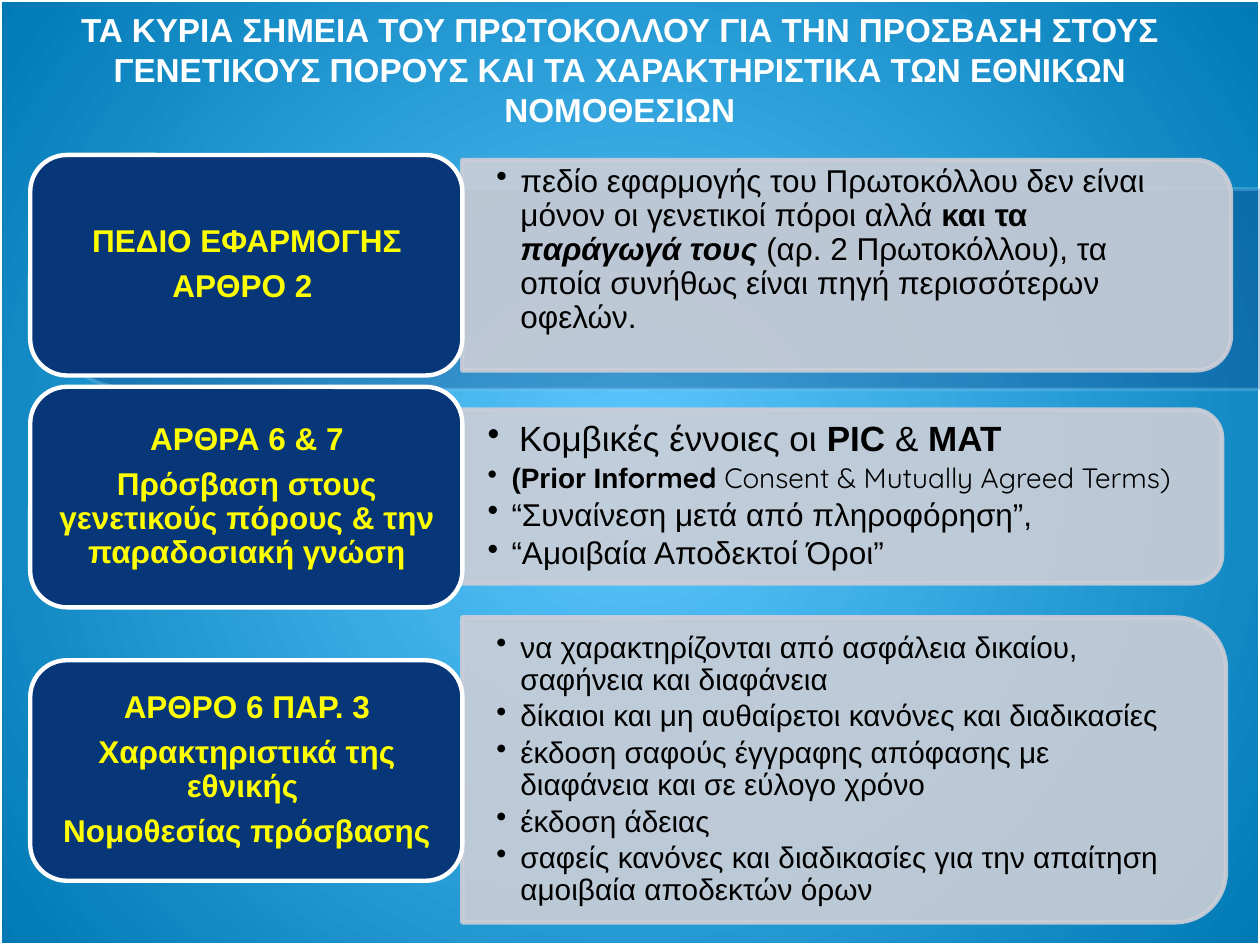
"""Build a slide of three labelled cards, each with a panel of bullet points."""
from lxml.etree import SubElement
from pptx import Presentation
from pptx.dml.color import RGBColor
from pptx.enum.shapes import MSO_SHAPE
from pptx.enum.text import MSO_ANCHOR, PP_ALIGN
from pptx.oxml.ns import qn
from pptx.util import Inches, Pt

WIDE, HIGH = 10, 7.5
NAVY, GREY, WHITE, YELLOW = "073779", "CCCED7", "FFFFFF", "FFFF00"
BOLD = {"bold": True}
QUICK = {"face": "Quicksand"}

TITLE = ("ΤΑ ΚΥΡΙΑ ΣΗΜΕΙΑ ΤΟΥ ΠΡΩΤΟΚΟΛΛΟΥ ΓΙΑ ΤΗΝ ΠΡΟΣΒΑΣΗ ΣΤΟΥΣ ΓΕΝΕΤΙΚΟΥΣ "
         "ΠΟΡΟΥΣ ΚΑΙ ΤΑ ΧΑΡΑΚΤΗΡΙΣΤΙΚΑ ΤΩΝ ΕΘΝΙΚΩΝ ΝΟΜΟΘΕΣΙΩΝ")

ROWS = [
    {"top": 1.23, "panel": (3.67, 1.27, 6.1, 1.67), "text": (3.67, 1.35, 6.02, 1.27),
     "size": 18,
     "label": ["ΠΕΔΙΟ ΕΦΑΡΜΟΓΗΣ", "ΑΡΘΡΟ 2 "],
     "points": [
         [("πεδίο εφαρμογής του Πρωτοκόλλου δεν είναι μόνον οι γενετικοί πόροι αλλά ", {}),
          ("και τα ", BOLD),
          ("παράγωγά τους ", {"bold": True, "italic": True}),
          ("(αρ. 2 Πρωτοκόλλου), τα οποία συνήθως είναι πηγή περισσότερων οφελών.", {})]]},
    {"top": 3.07, "panel": (3.6, 3.25, 6.1, 1.38), "text": (3.6, 3.32, 6.03, 1.24),
     "size": 18,
     "label": ["ΑΡΘΡΑ 6 & 7",
               "Πρόσβαση στους γενετικούς πόρους & την παραδοσιακή γνώση"],
     "points": [
         [("Κομβικές έννοιες οι ", {"size": 20}), ("PIC", {"size": 20, "bold": True}),
          (" & ", {"size": 20}), ("MAT", {"size": 20, "bold": True})],
         [("(Prior Inf", {"size": 16, "bold": True}),
          ("ormed ", {"size": 16, "bold": True, **QUICK}),
          ("Consent & Mutually Agreed Terms)", {"size": 16, **QUICK})],
         "“Συναίνεση μετά από πληροφόρηση”,",
         "“Αμοιβαία Αποδεκτοί Όροι”"]},
    {"top": 5.24, "panel": (3.67, 4.9, 6.06, 2.42), "text": (3.67, 5.02, 5.94, 2.18),
     "size": 17,
     "label": ["ΑΡΘΡΟ 6 ΠΑΡ. 3", "Χαρακτηριστικά της εθνικής ", "Νομοθεσίας πρόσβασης"],
     "points": [
         "να χαρακτηρίζονται από ασφάλεια δικαίου, σαφήνεια και διαφάνεια",
         "δίκαιοι και μη αυθαίρετοι κανόνες και διαδικασίες",
         "έκδοση σαφούς έγγραφης απόφασης με διαφάνεια και σε εύλογο χρόνο",
         "έκδοση άδειας",
         "σαφείς κανόνες και διαδικασίες για την απαίτηση αμοιβαία αποδεκτών όρων"]},
]


def tint(code):
    return RGBColor.from_string(code)


def shade(slide, inner, outer):
    fill = slide.background.fill
    fill.gradient()
    for stop, code, place in zip(fill.gradient_stops, (inner, outer), (0, 1)):
        stop.color.rgb = tint(code)
        stop.position = place
    grad = next(slide.element.iter(qn("a:gradFill")))
    grad.remove(grad.find(qn("a:lin")))
    ring = SubElement(grad, qn("a:path"), {"path": "circle"})
    SubElement(ring, qn("a:fillToRect"), dict.fromkeys("ltrb", "50000"))


def draw(slide, kind, box, fill=None, line=WHITE, width=2.5, alpha=None, turn=0):
    left, top, wide, high = box
    if turn:
        left, top = left + (wide - high) / 2, top + (high - wide) / 2
        wide, high = high, wide
    shape = slide.shapes.add_shape(kind, *map(Inches, (left, top, wide, high)))
    shape.rotation = turn
    shape.shadow.inherit = False
    if fill:
        shape.fill.solid()
        shape.fill.fore_color.rgb = tint(fill)
    else:
        shape.fill.background()
    shape.line.color.rgb = tint(line)
    shape.line.width = Pt(width)
    if alpha:
        for node in shape.element.spPr.iter(qn("a:srgbClr")):
            SubElement(node, qn("a:alpha"), {"val": str(alpha * 1000)})
    return shape


def write(slide, box, paras, size=18, color="000000", bold=False, align=PP_ALIGN.LEFT,
          pad=(0.1, 0.05), lead=0.9, after=0, bullet=False):
    frame = slide.shapes.add_textbox(*map(Inches, box)).text_frame
    frame.word_wrap = True
    frame.vertical_anchor = MSO_ANCHOR.MIDDLE
    frame.margin_left = frame.margin_right = Inches(pad[0])
    frame.margin_top = frame.margin_bottom = Inches(pad[1])
    for index, runs in enumerate(paras):
        para = frame.add_paragraph() if index else frame.paragraphs[0]
        runs = [(runs, {})] if isinstance(runs, str) else runs
        big = runs[0][1].get("size", size)
        para.alignment = align
        para.line_spacing = lead
        para.space_after = Pt(after * big)
        if bullet:
            dent = Inches(0.25 if big == 20 else 0.19)
            props = para._p.get_or_add_pPr()
            props.set("marL", str(dent))
            props.set("indent", str(-dent))
            SubElement(props, qn("a:buChar"), {"char": "•"})
        for words, style in runs:
            run = para.add_run()
            run.text = words
            font = run.font
            font.name = style.get("face", "Arial")
            font.size = Pt(style.get("size", size))
            font.bold = style.get("bold", bold)
            font.italic = style.get("italic", False)
            font.color.rgb = tint(color)


def main():
    deck = Presentation()
    deck.slide_width, deck.slide_height = Inches(WIDE), Inches(HIGH)
    slide = deck.slides.add_slide(deck.slide_layouts[6])
    shade(slide, "5DC9FF", "0079B5")
    draw(slide, MSO_SHAPE.RECTANGLE, (0, 0, WIDE, HIGH), width=2)
    band = draw(slide, MSO_SHAPE.ROUND_2_SAME_RECTANGLE, (0.28, 1.5, 9.72, 1.59),
                fill=NAVY, line="8FD9FB", width=2, alpha=30, turn=270)
    band.adjustments[0] = 0.5
    write(slide, (0, 0.16, 9.84, 0.78), [TITLE], size=19, color=WHITE, bold=True,
          align=PP_ALIGN.CENTER, lead=1.0)
    for row in ROWS:
        draw(slide, MSO_SHAPE.ROUND_2_SAME_RECTANGLE, row["panel"], fill=GREY,
             line=GREY, alpha=90, turn=90)
        write(slide, row["text"], row["points"], size=row["size"],
              pad=(0.27, 0.14), after=0.15, bullet=True)
        draw(slide, MSO_SHAPE.ROUNDED_RECTANGLE, (0.24, row["top"], 3.43, 1.75), fill=NAVY)
        write(slide, (0.33, row["top"] + 0.08, 3.26, 1.58), row["label"], color=YELLOW,
              bold=True, align=PP_ALIGN.CENTER, pad=(0.07, 0.04), after=0.35)
    deck.save("out.pptx")


if __name__ == "__main__":
    main()
